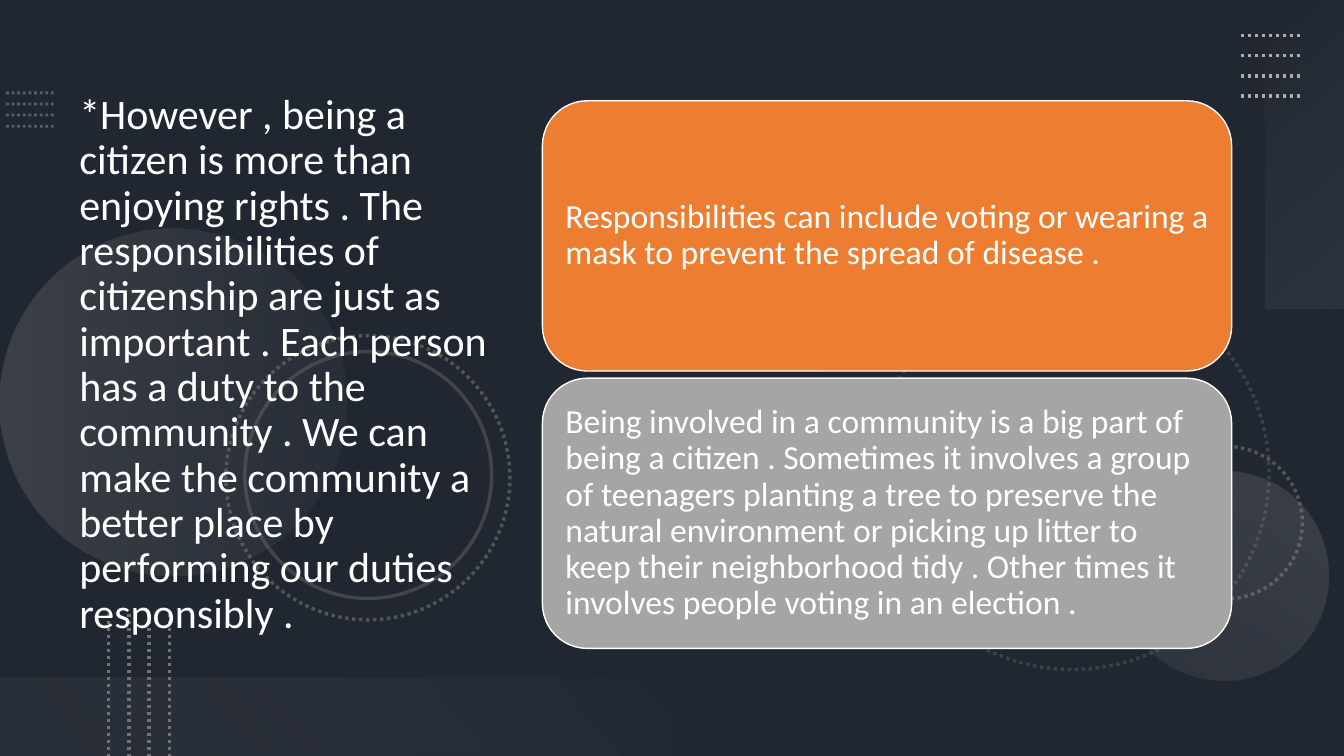
from pptx import Presentation
from pptx.dml.color import RGBColor
from pptx.enum.dml import MSO_LINE
from pptx.enum.shapes import MSO_CONNECTOR, MSO_SHAPE
from pptx.enum.text import MSO_ANCHOR, PP_ALIGN
from pptx.oxml.ns import qn
from pptx.util import Cm, Pt
from lxml.etree import SubElement

NAVY = RGBColor(0x44, 0x54, 0x6A)
BLACK = RGBColor(0x00, 0x00, 0x00)
WHITE = RGBColor(0xFF, 0xFF, 0xFF)
BLUE_GREY = RGBColor(0x84, 0x97, 0xB0)
GREY = RGBColor(0x76, 0x71, 0x71)
SILVER = RGBColor(0xAF, 0xAB, 0xAB)
PALE = RGBColor(0xF5, 0xF5, 0xF5)
ORANGE = RGBColor(0xED, 0x7D, 0x31)
CARD_GREY = RGBColor(0xA5, 0xA5, 0xA5)

WIDTH, HEIGHT = 33.87, 19.05

TITLE = (
    "*However , being a citizen is more than enjoying rights . The "
    "responsibilities of citizenship are just as important . Each person has a "
    "duty to the community . We can make the community a better place by "
    "performing our duties responsibly ."
)
CARDS = [
    ("Responsibilities can include voting or wearing a mask to prevent the "
     "spread of disease .", ORANGE),
    ("Being involved in a community is a big part of being a citizen . "
     "Sometimes it involves a group of teenagers planting a tree to preserve "
     "the natural environment or picking up litter to keep their neighborhood "
     "tidy . Other times it involves people voting in an election .", CARD_GREY),
]


def set_all(obj, values):
    """Set each attribute named in values."""
    for name, value in values.items():
        setattr(obj, name, value)


def set_alpha(colors, percents):
    """Give each colour element its opacity in percent."""
    for color, percent in zip(colors, percents):
        SubElement(color, qn("a:alpha")).set("val", str(percent * 1000))


def set_line(obj, color, width, dash=None, alpha=100):
    """Style an outline or a connector."""
    obj.line.fill.solid()
    obj.line.color.rgb = color
    set_all(obj.line, {"width": Pt(width), "dash_style": dash})
    if alpha < 100:
        set_alpha(obj.element.spPr.xpath("./a:ln//a:srgbClr"), [alpha])


def add_shape(s, kind, x, y, w, h, rotation=0):
    """Add a preset shape with no shadow, fill or outline."""
    sp = s.shapes.add_shape(kind, Cm(x), Cm(y), Cm(w), Cm(h))
    sp.rotation = rotation
    sp.shadow.inherit = False
    sp.fill.background()
    sp.line.fill.background()
    return sp


def fill_gradient(sp, stops, angle):
    """Fill with two (position, colour, opacity) stops."""
    sp.fill.gradient()
    sp.fill.gradient_angle = angle
    for stop, (position, color, _) in zip(sp.fill.gradient_stops, stops):
        stop.position = position
        stop.color.rgb = color
    colors = sp.element.spPr.xpath("./a:gradFill//a:srgbClr")
    set_alpha(colors, [alpha for _, _, alpha in stops])


def add_ring(s, x, y, size, dash, alpha):
    """Add an unfilled circle."""
    sp = add_shape(s, MSO_SHAPE.OVAL, x, y, size, size, 75)
    set_line(sp, GREY, 2.5, dash, alpha)


def add_dotted_lines(s, start, end, step, color, width=2.5, alpha=100):
    """Add four parallel dotted lines, each shifted by step."""
    dx, dy = step
    for i in range(4):
        line = s.shapes.add_connector(
            MSO_CONNECTOR.STRAIGHT,
            Cm(start[0] + i * dx), Cm(start[1] + i * dy),
            Cm(end[0] + i * dx), Cm(end[1] + i * dy))
        set_line(line, color, width, MSO_LINE.ROUND_DOT, alpha)
        SubElement(line.element.spPr, qn("a:effectLst"))


def write_text(sp, text, size, inset_x, inset_y):
    """Write one white, left-aligned paragraph, centred vertically."""
    tf = sp.text_frame
    set_all(tf, {
        "word_wrap": True, "vertical_anchor": MSO_ANCHOR.MIDDLE,
        "margin_left": Cm(inset_x), "margin_right": Cm(inset_x),
        "margin_top": Cm(inset_y), "margin_bottom": Cm(inset_y)})
    p = tf.paragraphs[0]
    set_all(p, {"alignment": PP_ALIGN.LEFT, "line_spacing": 0.9})
    r = p.add_run()
    r.text = text
    set_all(r.font, {"name": "Calibri", "size": Pt(size)})
    r.font.color.rgb = WHITE


def add_backdrop(s):
    """Add the dark overlay, discs, rings, bands and dotted lines."""
    s.background.fill.solid()
    s.background.fill.fore_color.rgb = NAVY
    overlay = add_shape(s, MSO_SHAPE.RECTANGLE, 0, 0, WIDTH, HEIGHT)
    overlay.fill.solid()
    overlay.fill.fore_color.rgb = BLACK
    set_alpha(overlay.element.spPr.xpath("./a:solidFill/a:srgbClr"), [53])

    add_dotted_lines(s, (0.15, 2.34), (1.35, 2.34), (0, 0.28), BLUE_GREY, 2, 50)
    add_ring(s, 22.07, 6.96, 9.91, MSO_LINE.ROUND_DOT, 35)
    add_ring(s, 28.98, 11.25, 3.84, MSO_LINE.ROUND_DOT, 60)
    for x, y, size, rotation, stops in [
        (0, 5.77, 8.74, 270, [(0, SILVER, 20), (1, GREY, 10)]),
        (28.19, 11.86, 5.28, 210, [(0, SILVER, 10), (1, SILVER, 20)]),
    ]:
        disc = add_shape(s, MSO_SHAPE.OVAL, x, y, size, size, rotation)
        fill_gradient(disc, stops, 270)
    add_ring(s, 5.69, 8.46, 7.16, MSO_LINE.ROUND_DOT, 60)
    add_ring(s, 6.17, 8.86, 6.22, None, 40)

    band = add_shape(s, MSO_SHAPE.RECTANGLE, 29.01, 2.9, 7.77, 1.98, 270)
    fill_gradient(band, [(0, PALE, 0), (1, SILVER, 10)], 220)
    add_dotted_lines(s, (31.27, 0.89), (32.79, 0.89), (0, 0.51), SILVER)
    band = add_shape(s, MSO_SHAPE.RECTANGLE, 0, 17.07, 16.94, 1.98, 180)
    fill_gradient(band, [(0.1, GREY, 10), (1, PALE, 0)], 220)
    add_dotted_lines(s, (2.74, 15.47), (2.74, HEIGHT), (0.51, 0), GREY)


def add_card(s, y, text, color):
    """Add a rounded card with its text."""
    sp = add_shape(s, MSO_SHAPE.ROUNDED_RECTANGLE, 13.67, y, 17.37, 6.81)
    sp.fill.solid()
    sp.fill.fore_color.rgb = color
    set_line(sp, WHITE, 1)
    write_text(sp, text, 24, 0.25, 0.25)


def main():
    """Build the slide on citizens' responsibilities."""
    prs = Presentation()
    set_all(prs, {"slide_width": Cm(WIDTH), "slide_height": Cm(HEIGHT)})
    s = prs.slides.add_slide(prs.slide_layouts[6])
    add_backdrop(s)
    title = s.shapes.add_textbox(Cm(1.75), Cm(1.37), Cm(11.66), Cm(15.67))
    write_text(title, TITLE, 30, 0.25, 0.13)
    for i, (text, color) in enumerate(CARDS):
        add_card(s, 2.54 + i * 6.99, text, color)
    prs.save("out.pptx")


if __name__ == "__main__":
    main()
